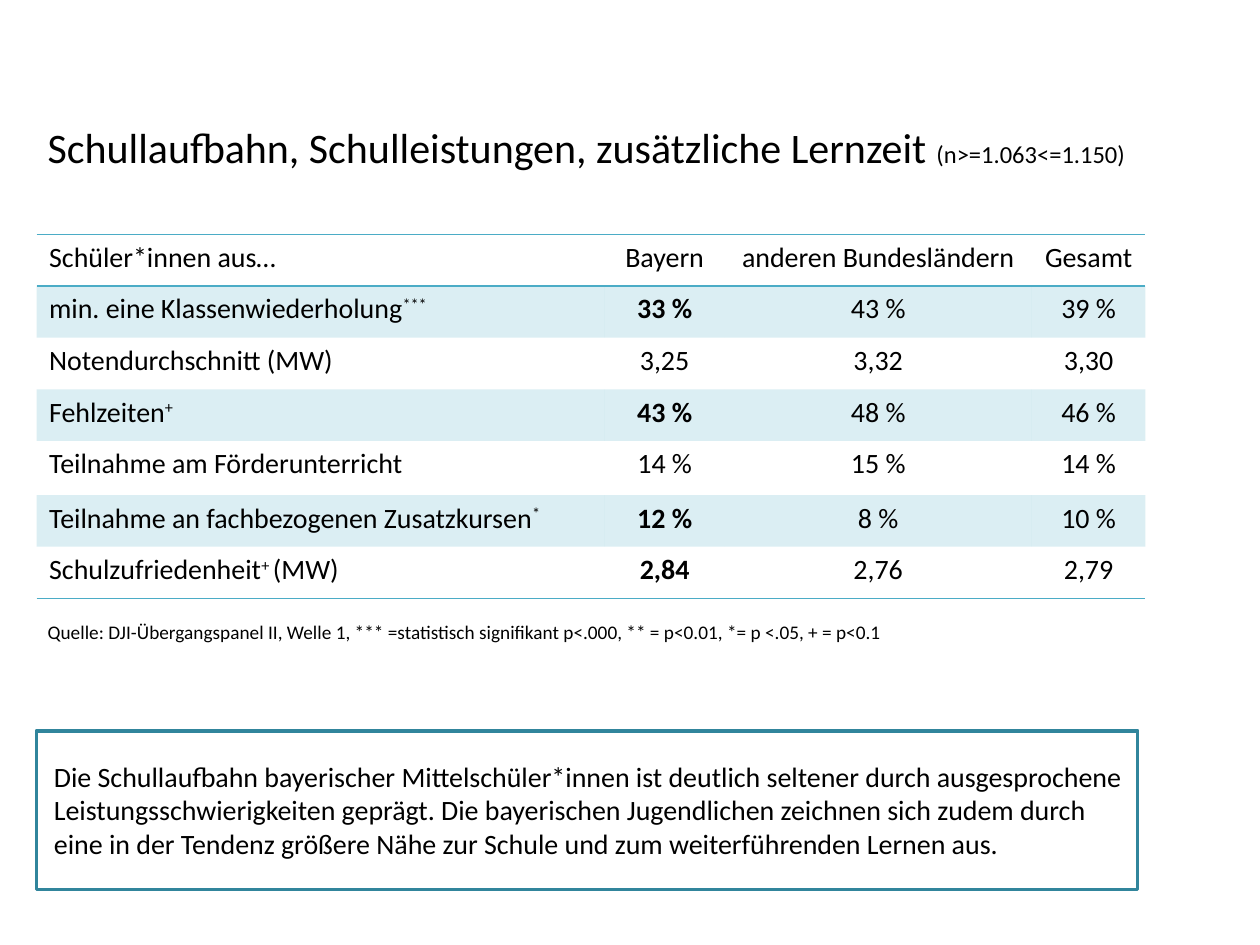
from lxml import etree
from pptx import Presentation
from pptx.dml.color import RGBColor
from pptx.enum.shapes import MSO_SHAPE
from pptx.enum.text import MSO_ANCHOR, PP_ALIGN
from pptx.oxml.ns import qn
from pptx.util import Inches, Pt

CENTER = PP_ALIGN.CENTER
LEFT = PP_ALIGN.LEFT
TOP = MSO_ANCHOR.TOP
MIDDLE = MSO_ANCHOR.MIDDLE
RECTANGLE = MSO_SHAPE.RECTANGLE

FONT = "Calibri"
COLORS = {"text": "000000", "accent": "4BACC6", "frame": "31859C"}
PLAIN_TABLE_STYLE = "{2D5ABB26-0587-4C30-8999-92F81FD0307C}"
SLIDE_W, SLIDE_H = 10, 7.5
COLUMNS = [4.51, 0.95, 2.44, 0.9]
ROWS = [0.41, 0.41, 0.41, 0.41, 0.43, 0.41, 0.41]

# Each label is a list of (text, superscript) parts.
HEADER = ([("Schüler*innen aus…", False)], ["Bayern", "anderen Bundesländern", "Gesamt"])
BODY = [
    ([("min. eine Klassenwiederholung", False), ("***", True)], ["33 %", "43 %", "39 %"]),
    ([("Notendurchschnitt (MW)", False)], ["3,25", "3,32", "3,30"]),
    ([("Fehlzeiten", False), ("+", True)], ["43 %", "48 %", "46 %"]),
    ([("Teilnahme am Förderunterricht", False)], ["14 %", "15 %", "14 %"]),
    ([("Teilnahme an fachbezogenen Zusatzkursen", False), ("*", True)], ["12 %", "8 %", "10 %"]),
    ([("Schulzufriedenheit", False), ("+ ", True), ("(MW)", False)], ["2,84", "2,76", "2,79"]),
]
BOLD_VALUES = {"33 %", "43 %", "12 %", "2,84"}
SUMMARY = [
    "Die Schullaufbahn bayerischer Mittelschüler*innen ist deutlich seltener durch ausgesprochene",
    "Leistungsschwierigkeiten geprägt. Die bayerischen Jugendlichen zeichnen sich zudem durch \n"
    "eine in der Tendenz größere Nähe zur Schule und zum weiterführenden Lernen aus.",
]


def rgb(name):
    return RGBColor.from_string(COLORS[name])


def style(font, size, bold=False):
    font.name, font.size, font.bold = FONT, Pt(size), bold
    font.color.rgb = rgb("text")


def add_run(p, text, size, bold=False, superscript=False):
    r = p.add_run()
    r.text = text
    style(r.font, size, bold)
    if superscript:
        r.font._element.set("baseline", "30000")


def add_textbox(slide, box, anchor=TOP, wrap=False):
    tf = slide.shapes.add_textbox(*map(Inches, box)).text_frame
    tf.word_wrap, tf.vertical_anchor = wrap, anchor
    return tf


def add_border(cell, side):
    """Draw a thin accent line on one side of a cell; call before filling."""
    ln = etree.SubElement(cell._tc.get_or_add_tcPr(), qn(f"a:ln{side}"), w=str(Pt(1)))
    fill = etree.SubElement(ln, qn("a:solidFill"))
    etree.SubElement(fill, qn("a:srgbClr"), val=COLORS["accent"])


def fill_cell(cell, tinted):
    if not tinted:
        cell.fill.background()
        return
    cell.fill.solid()
    cell.fill.fore_color.rgb = rgb("accent")
    color = cell._tc.tcPr.find(".//" + qn("a:solidFill") + "/" + qn("a:srgbClr"))
    etree.SubElement(color, qn("a:alpha"), val="20000")


def add_title(slide, box):
    p = add_textbox(slide, box, MIDDLE, wrap=True).paragraphs[0]
    add_run(p, "Schullaufbahn, Schulleistungen, zusätzliche Lernzeit ", 24)
    add_run(p, "(n>=1.063<=1.150)", 14)


def add_results_table(slide, left, top):
    box = (left, top, sum(COLUMNS), sum(ROWS))
    table = slide.shapes.add_table(len(ROWS), len(COLUMNS), *map(Inches, box)).table
    table.first_row = table.horz_banding = False
    table._tbl.tblPr.find(qn("a:tableStyleId")).text = PLAIN_TABLE_STYLE
    for column, width in zip(table.columns, COLUMNS):
        column.width = Inches(width)
    for row, height in zip(table.rows, ROWS):
        row.height = Inches(height)

    last = len(ROWS) - 1
    for i, (label, values) in enumerate([HEADER, *BODY]):
        contents = [label] + [[(value, False)] for value in values]
        for j, parts in enumerate(contents):
            cell = table.cell(i, j)
            p = cell.text_frame.paragraphs[0]
            p.alignment = CENTER if j else LEFT
            for text, superscript in parts:
                bold = j == 1 and text in BOLD_VALUES
                add_run(p, text, 16, bold, superscript)
            if i == 0:
                add_border(cell, "T")
            if i in (0, last):
                add_border(cell, "B")
            fill_cell(cell, tinted=i % 2 == 1)


def add_source(slide, box):
    p = add_textbox(slide, box).paragraphs[0]
    add_run(p, "Quelle: DJI-Übergangspanel II, Welle 1, *** =statistisch signifikant p<.000, "
               "** = p<0.01, *= p <.05, + = p<0.1", 11)


def add_summary(slide, box):
    left, top, width, height = box
    sp = slide.shapes.add_shape(RECTANGLE, *map(Inches, box))
    sp.shadow.inherit = False
    sp.fill.background()
    sp.line.color.rgb = rgb("frame")
    sp.line.width = Pt(2)

    text_h = 0.91
    tf = add_textbox(slide, (left + 0.04, top + (height - text_h) / 2, width + 0.09, text_h))
    for i, text in enumerate(SUMMARY):
        p = tf.add_paragraph() if i else tf.paragraphs[0]
        p.text = text
        for r in p.runs:
            style(r.font, 16)


def main():
    prs = Presentation()
    prs.slide_width, prs.slide_height = Inches(SLIDE_W), Inches(SLIDE_H)
    slide = prs.slides.add_slide(prs.slide_layouts[6])
    margin = 0.28
    add_title(slide, (margin, 0.92, 0.9 * SLIDE_W, 0.48))
    add_results_table(slide, margin + 0.01, 1.86)
    add_source(slide, (margin, 4.87, 6.89, 0.59))
    add_summary(slide, (margin + 0.01, 5.8, 8.74, 1.26))
    prs.save("out.pptx")


if __name__ == "__main__":
    main()
